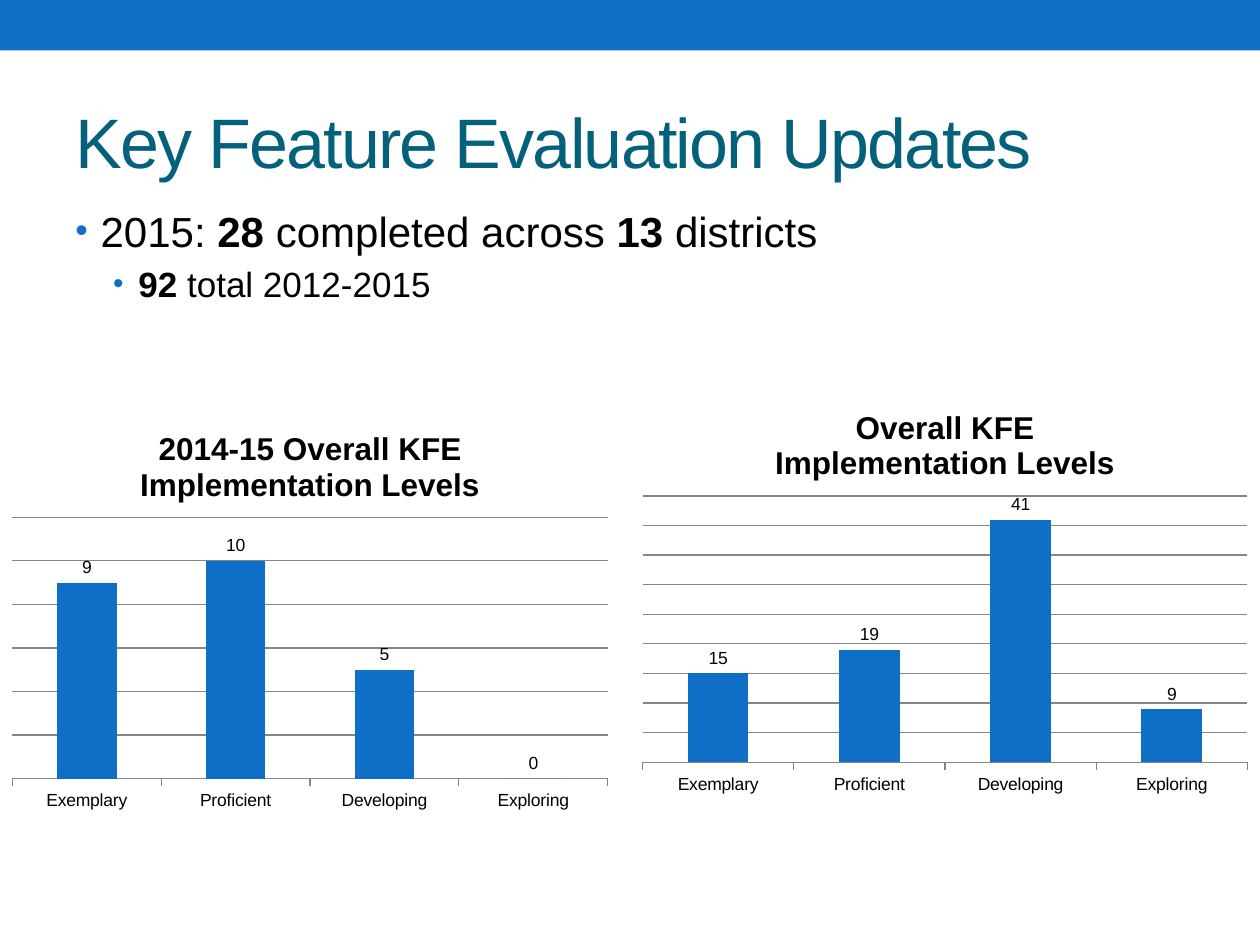
import pptx
import pptx.chart.data
import pptx.dml.color
import pptx.enum.chart
import pptx.enum.shapes
import pptx.enum.text
import pptx.oxml
import pptx.oxml.ns
import pptx.util
from pptx.util import Cm

FONT = "Arial"
COLORS = {"blue": "0F6FC6", "teal": "04617B", "black": "000000", "gray": "868686"}
LEVELS = ["Exemplary", "Proficient", "Developing", "Exploring"]


def rgb(name):
    return pptx.dml.color.RGBColor.from_string(COLORS[name])


def style_font(font, size, color="black", bold=False):
    font.name = FONT
    font.size = pptx.util.Pt(size)
    font.bold = bold
    font.color.rgb = rgb(color)


def add_span(para, text, *, size, color="black", bold=False, spacing=None):
    span = para.add_run()
    span.text = text
    style_font(span.font, size, color, bold)
    if spacing is not None:
        span.font._element.set("spc", str(spacing * 100))


def add_text_frame(page, box, anchor):
    frame = page.shapes.add_textbox(*box).text_frame
    frame.word_wrap = True
    frame.vertical_anchor = anchor
    return frame


def add_bullet(para, margin, hanging):
    properties = para._p.get_or_add_pPr()
    properties.set("marL", str(margin))
    properties.set("indent", str(-hanging))
    namespace = pptx.oxml.ns.nsdecls("a")
    for markup in (
        f'<a:buClr {namespace}><a:srgbClr val="{COLORS["blue"]}"/></a:buClr>',
        f'<a:buSzPct {namespace} val="85000"/>',
        f'<a:buFont {namespace} typeface="{FONT}"/>',
        f'<a:buChar {namespace} char="•"/>',
    ):
        properties.append(pptx.oxml.parse_xml(markup))


def add_banner(page, box):
    banner = page.shapes.add_shape(pptx.enum.shapes.MSO_SHAPE.RECTANGLE, *box)
    banner.shadow.inherit = False
    banner.fill.solid()
    banner.fill.fore_color.rgb = rgb("blue")
    banner.line.fill.background()


def add_title(page, box, text):
    frame = add_text_frame(page, box, pptx.enum.text.MSO_ANCHOR.MIDDLE)
    add_span(frame.paragraphs[0], text, size=40, color="teal", spacing=-1)


def add_summary(page, box, lines):
    frame = add_text_frame(page, box, pptx.enum.text.MSO_ANCHOR.TOP)
    for index, (size, margin, parts) in enumerate(lines):
        para = frame.add_paragraph() if index else frame.paragraphs[0]
        para.space_before = pptx.util.Pt(size * 0.2)
        add_bullet(para, margin, Cm(0.51))
        for text, bold in parts:
            add_span(para, text, size=size, bold=bold)


def add_level_chart(page, box, title_lines, values, maximum, step):
    data = pptx.chart.data.CategoryChartData()
    data.categories = LEVELS
    data.add_series("Series 1", values)
    kind = pptx.enum.chart.XL_CHART_TYPE.COLUMN_CLUSTERED
    chart = page.shapes.add_chart(kind, *box, data).chart
    style_font(chart.font, 10)
    chart.has_legend = False

    chart.has_title = True
    frame = chart.chart_title.text_frame
    for index, line in enumerate(title_lines):
        para = frame.add_paragraph() if index else frame.paragraphs[0]
        add_span(para, line, size=18, bold=True)
    chart.chart_title.include_in_layout = False

    value_axis = chart.value_axis
    value_axis.minimum_scale = 0
    value_axis.maximum_scale = maximum
    value_axis.major_unit = step
    value_axis.has_major_gridlines = True
    value_axis.visible = False
    category_axis = chart.category_axis
    category_axis.major_tick_mark = pptx.enum.chart.XL_TICK_MARK.OUTSIDE
    for line in (value_axis.major_gridlines.format.line, category_axis.format.line):
        line.color.rgb = rgb("gray")
        line.width = pptx.util.Pt(0.75)

    plot = chart.plots[0]
    plot.gap_width = 150
    plot.vary_by_categories = False
    fill = plot.series[0].format.fill
    fill.solid()
    fill.fore_color.rgb = rgb("blue")
    plot.has_data_labels = True
    labels = plot.data_labels
    labels.show_value = True
    labels.position = pptx.enum.chart.XL_LABEL_POSITION.OUTSIDE_END
    style_font(labels.font, 10)


def main():
    deck = pptx.Presentation()
    deck.slide_width, deck.slide_height = Cm(25.4), Cm(19.05)
    page = deck.slides.add_slide(deck.slide_layouts[6])

    add_banner(page, (0, 0, deck.slide_width, Cm(1.02)))
    add_title(page, (Cm(1.27), Cm(1.47), Cm(22.86), Cm(2.74)),
              "Key Feature Evaluation Updates")
    add_summary(page, (Cm(1.27), Cm(4.01), Cm(22.86), Cm(14.4)), [
        (24, Cm(0.51), [("2015: ", False), ("28", True), (" completed across ", False),
                        ("13 ", True), ("districts", False)]),
        (20, Cm(1.27), [("92 ", True), ("total 2012-2015", False)]),
    ])
    add_level_chart(page, (Cm(12.7), Cm(7.85), Cm(12.7), Cm(8.33)),
                    ["Overall KFE", "Implementation Levels"], [15, 19, 41, 9], 45, 5)
    add_level_chart(page, (0, Cm(8.28), Cm(12.5), Cm(8.23)),
                    ["2014-15 Overall KFE", "Implementation Levels"], [9, 10, 5, 0], 12, 2)
    deck.save("out.pptx")


if __name__ == "__main__":
    main()
